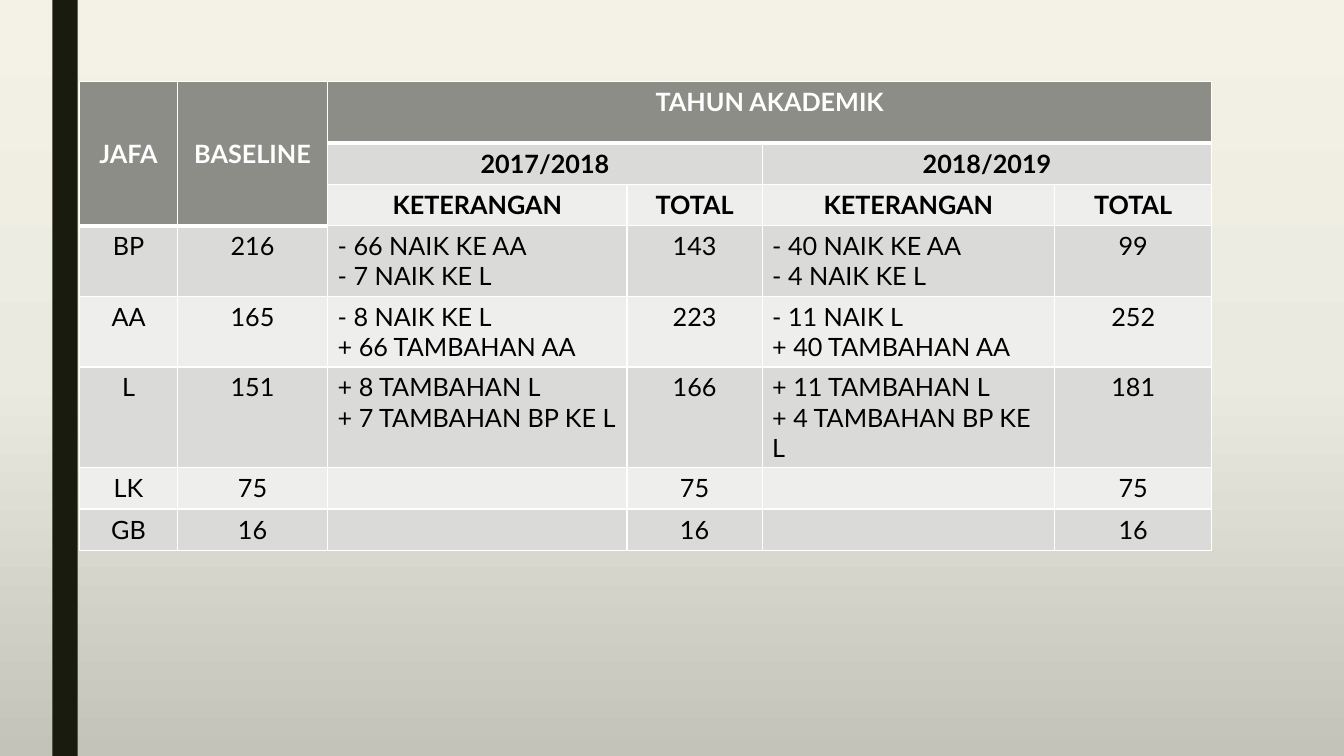
from copy import deepcopy
from lxml import etree
from pptx import Presentation
from pptx.dml.color import RGBColor as RGB
from pptx.enum.shapes import MSO_SHAPE as SHAPE
from pptx.enum.text import MSO_ANCHOR as ANCHOR, PP_ALIGN as ALIGN
from pptx.oxml.ns import qn
from pptx.util import Inches, Pt

ROWS = [
    ("JAFA", "BASELINE", "TAHUN AKADEMIK", "", "", ""),
    ("", "", "2017/2018", "", "2018/2019", ""),
    ("", "", "KETERANGAN", "TOTAL", "KETERANGAN", "TOTAL"),
    ("BP", "216", "- 66 NAIK KE AA\n- 7 NAIK KE L", "143",
     "- 40 NAIK KE AA\n- 4 NAIK KE L", "99"),
    ("AA", "165", "- 8 NAIK KE L\n+ 66 TAMBAHAN AA", "223",
     "- 11 NAIK L\n+ 40 TAMBAHAN AA", "252"),
    ("L", "151", "+ 8 TAMBAHAN L\n+ 7 TAMBAHAN BP KE L", "166",
     "+ 11 TAMBAHAN L\n+ 4 TAMBAHAN BP KE L", "181"),
    ("LK", "75", "", "75", "", "75"),
    ("GB", "16", "", "16", "", "16"),
]
MERGES = [((0, 0), (2, 0)), ((0, 1), (2, 1)), ((0, 2), (0, 5)),
          ((1, 2), (1, 3)), ((1, 4), (1, 5))]
MIDDLE = {(0, 0), (0, 1), (1, 2)}
WIDTHS = [0.97, 1.49, 2.97, 1.34, 2.9, 1.56]
HEIGHTS = [0.61] + [0.41] * 7
HEADS = 3
NOTES = (2, 4)
COLORS = {"bar": "191B0E", "head": "8C8D86", "odd": "DADBD9",
          "even": "EEEEED", "white": "FFFFFF", "black": "000000"}
STOPS = [(0, "F4F2E7"), (0.5, "EBEAE0"), (1, "C4C3B9")]


def tint(name):
    return RGB.from_string(COLORS[name])


def paint_back(slide):
    fill = slide.background.fill
    fill.gradient()
    fill.gradient_angle = 270
    stops = slide.element.find(".//" + qn("a:gsLst"))
    stops.insert(1, deepcopy(stops[0]))
    for stop, (pos, color) in zip(fill.gradient_stops, STOPS):
        stop.position = pos
        stop.color.rgb = RGB.from_string(color)


def is_dark(row, col):
    """Tell whether a cell lies in the dark part of the header."""
    return row == 0 or (0 < row < HEADS and col < 2)


def add_edges(cell, sizes):
    """Draw white borders; sizes maps a side to its width in points."""
    props = cell._tc.get_or_add_tcPr()
    for side, size in sizes.items():
        line = etree.SubElement(props, qn("a:ln" + side), w=str(Pt(size)))
        fill = etree.SubElement(line, qn("a:solidFill"))
        etree.SubElement(fill, qn("a:srgbClr"), val=COLORS["white"])


def fill_cell(cell, row, col, text):
    dark = is_dark(row, col)
    after = row > 0 and not dark and is_dark(row - 1, col)
    add_edges(cell, {"L": 1, "R": 1, "T": 3 if after else 1,
                     "B": 3 if dark else 1})
    cell.fill.solid()
    cell.fill.fore_color.rgb = tint(
        "head" if dark else "odd" if row % 2 else "even")
    cell.vertical_anchor = ANCHOR.MIDDLE if (row, col) in MIDDLE else ANCHOR.TOP
    if not text:
        return
    cell.text = text
    style = {"name": "Lato", "size": Pt(18), "bold": row < HEADS}
    left = row >= HEADS and col in NOTES
    for para in cell.text_frame.paragraphs:
        para.alignment = ALIGN.LEFT if left else ALIGN.CENTER
        for run in para.runs:
            for key, val in style.items():
                setattr(run.font, key, val)
            run.font.color.rgb = tint("white" if dark else "black")


def add_grid(slide):
    grid = slide.shapes.add_table(
        len(ROWS), len(WIDTHS), Inches(0.79), Inches(0.81),
        Inches(sum(WIDTHS)), Inches(sum(HEIGHTS))).table
    for part, size in zip(grid.columns, WIDTHS):
        part.width = Inches(size)
    for part, size in zip(grid.rows, HEIGHTS):
        part.height = Inches(size)
    for row, texts in enumerate(ROWS):
        for col, text in enumerate(texts):
            fill_cell(grid.cell(row, col), row, col, text)
    for first, last in MERGES:
        grid.cell(*first).merge(grid.cell(*last))


def main():
    prs = Presentation()
    prs.slide_width, prs.slide_height = Inches(13.33), Inches(7.5)
    slide = prs.slides.add_slide(prs.slide_layouts[6])
    paint_back(slide)
    bar = slide.shapes.add_shape(
        SHAPE.RECTANGLE, Inches(0.52), 0, Inches(0.25), prs.slide_height)
    bar.shadow.inherit = False
    bar.fill.solid()
    bar.fill.fore_color.rgb = tint("bar")
    bar.line.fill.background()
    add_grid(slide)
    prs.save("out.pptx")


if __name__ == "__main__":
    main()
